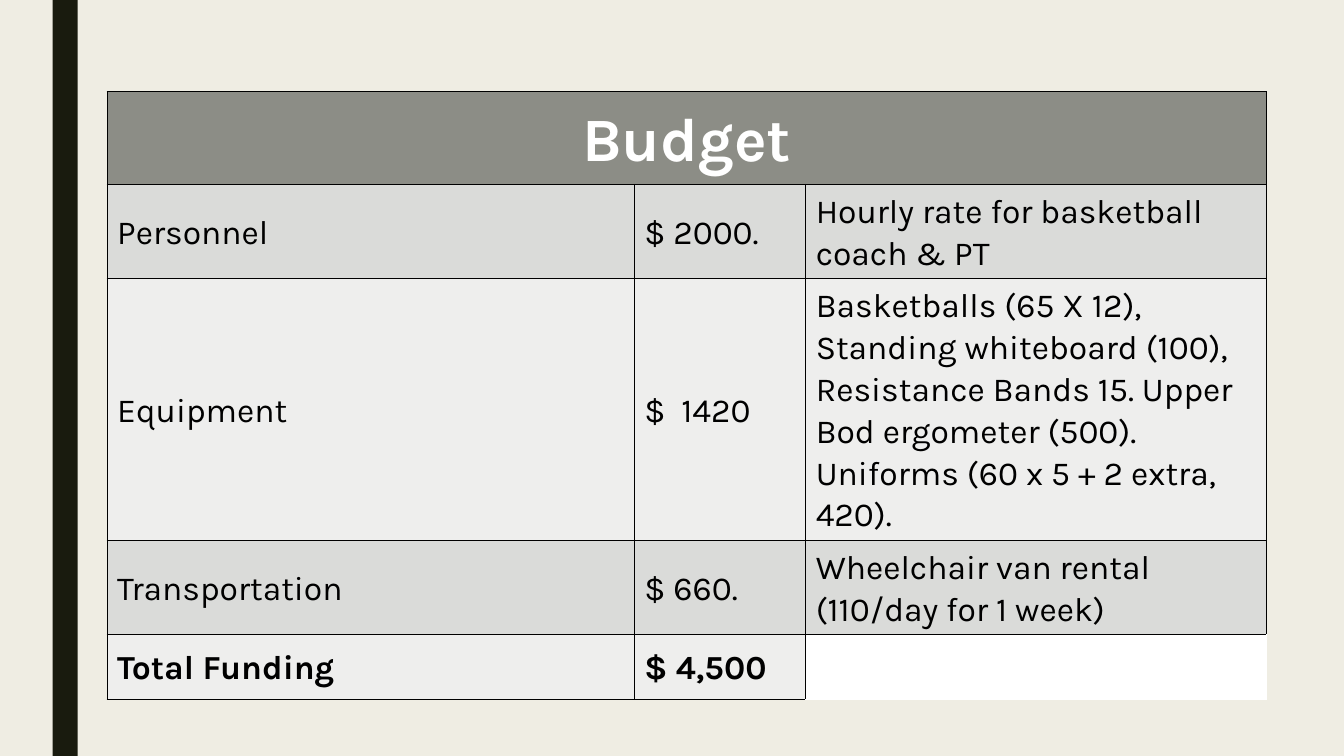
from lxml import etree
from pptx import Presentation
from pptx.dml.color import RGBColor
from pptx.enum.shapes import MSO_SHAPE
from pptx.enum.text import MSO_ANCHOR, PP_ALIGN
from pptx.oxml.ns import qn
from pptx.util import Pt

RECTANGLE = MSO_SHAPE.RECTANGLE
MIDDLE = MSO_ANCHOR.MIDDLE
LEFT, CENTER = PP_ALIGN.LEFT, PP_ALIGN.CENTER

FONT = "Karla"
BLACK, WHITE = "000000", "FFFFFF"
BACKGROUND, BAR = "EFEDE3", "191B0E"
HEADER, BAND_DARK, BAND_LIGHT = "8C8D86", "DADBD9", "EEEEED"

COLUMN_WIDTHS = [376.5, 122.5, 329]
ROW_HEIGHTS = [66.25, 67.25, 187.25, 67.25, 46]
BUDGET = [
    ["Budget", "", ""],
    ["Personnel", "$ 2000.", "Hourly rate for basketball coach & PT"],
    ["Equipment", "$  1420",
     "Basketballs (65 X 12), Standing whiteboard (100), Resistance Bands 15. "
     "Upper Bod ergometer (500). Uniforms (60 x 5 + 2 extra, 420)."],
    ["Transportation", "$ 660.", "Wheelchair van rental (110/day for 1 week)"],
    ["Total Funding", "$ 4,500", ""],
]


def rgb(color):
    return RGBColor.from_string(color)


def paint(fill, color):
    fill.solid()
    fill.fore_color.rgb = rgb(color)


def add_bar(s):
    sp = s.shapes.add_shape(RECTANGLE, Pt(37.5), 0, Pt(18), Pt(540))
    sp.shadow.inherit = False
    paint(sp.fill, BAR)
    sp.line.fill.background()


def set_borders(cell, left=BLACK, right=BLACK, top=BLACK, bottom=BLACK):
    """Call before the cell is filled: the schema wants lines ahead of the fill."""
    tc_pr = cell._tc.get_or_add_tcPr()
    for side, color in zip("LRTB", (left, right, top, bottom)):
        ln = etree.SubElement(tc_pr, qn(f"a:ln{side}"), w=str(Pt(1)))
        fill = etree.SubElement(ln, qn("a:solidFill"))
        etree.SubElement(fill, qn("a:srgbClr"), val=color)


def set_cell_text(cell, text, size=24, color=BLACK, bold=False, align=LEFT):
    cell.vertical_anchor = MIDDLE
    p = cell.text_frame.paragraphs[0]
    p.text = text
    p.alignment = align
    p.line_spacing = 1.07
    p.space_after = Pt(8)
    for r in p.runs:
        r.font.name = FONT
        r.font.size = Pt(size)
        r.font.bold = bold
        r.font.color.rgb = rgb(color)


def add_budget_table(s):
    frame = s.shapes.add_table(len(BUDGET), len(COLUMN_WIDTHS), Pt(76.5), Pt(65.5),
                               Pt(sum(COLUMN_WIDTHS)), Pt(sum(ROW_HEIGHTS)))
    table = frame.table
    table.first_row = table.horz_banding = False
    for column, width in zip(table.columns, COLUMN_WIDTHS):
        column.width = Pt(width)
    for row, height in zip(table.rows, ROW_HEIGHTS):
        row.height = Pt(height)
    table.cell(0, 0).merge(table.cell(0, 2))

    last = len(BUDGET) - 1
    for i, texts in enumerate(BUDGET):
        for j, text in enumerate(texts):
            cell = table.cell(i, j)
            if i == last and not text:
                set_borders(cell, right=WHITE, bottom=WHITE)
                paint(cell.fill, WHITE)
                continue
            set_borders(cell)
            if i == 0:
                paint(cell.fill, HEADER)
                if text:
                    set_cell_text(cell, text, 44, WHITE, True, CENTER)
            else:
                paint(cell.fill, BAND_DARK if i % 2 else BAND_LIGHT)
                set_cell_text(cell, text, bold=i == last)


def main():
    prs = Presentation()
    prs.slide_width, prs.slide_height = Pt(960), Pt(540)
    s = prs.slides.add_slide(prs.slide_layouts[6])
    paint(s.background.fill, BACKGROUND)
    add_bar(s)
    add_budget_table(s)
    prs.save("out.pptx")


if __name__ == "__main__":
    main()
